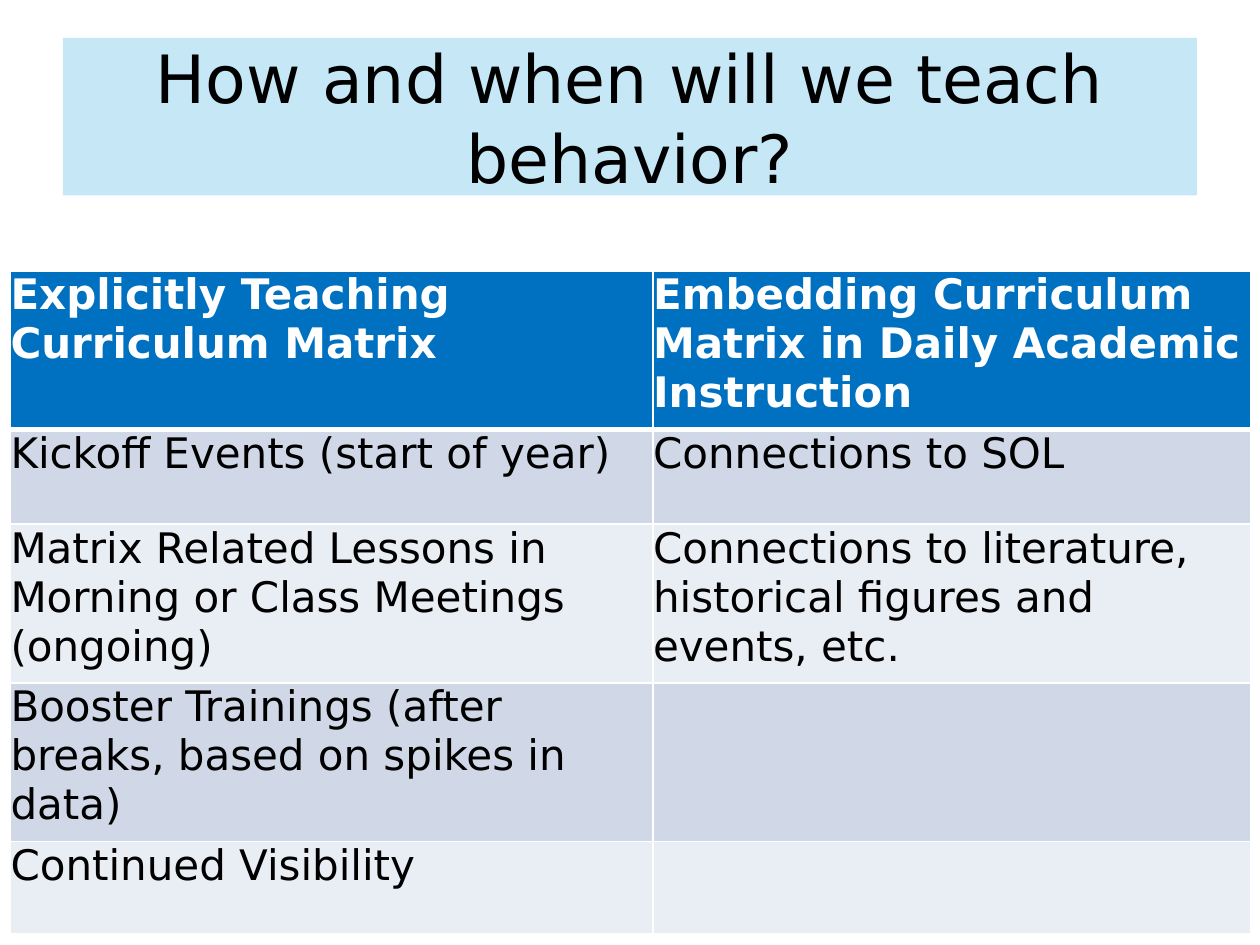
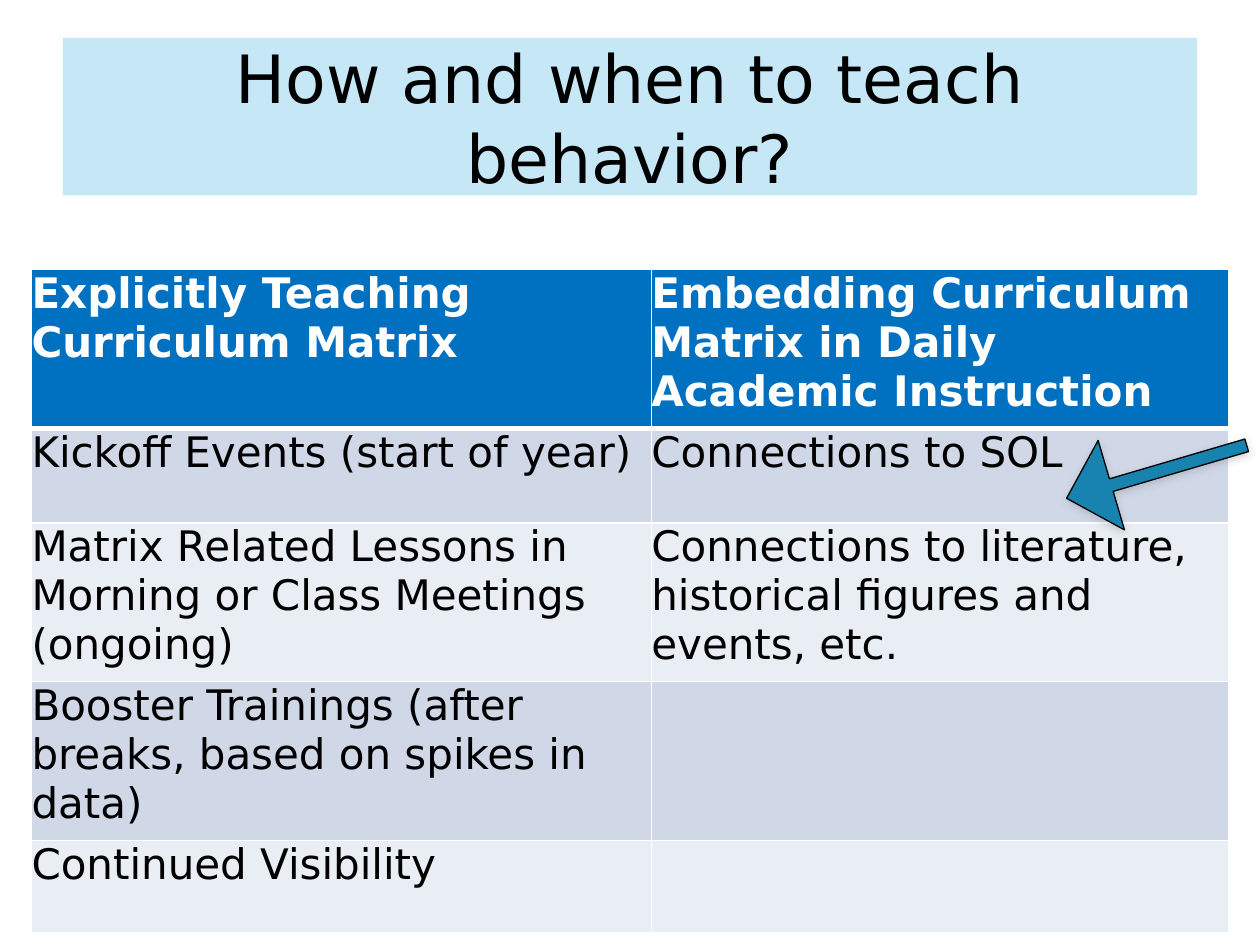
"""Build two slides on how and when to teach behavior, each with a title band and a table."""
from lxml import etree
from pptx import Presentation
from pptx.dml.color import RGBColor
from pptx.enum.shapes import MSO_SHAPE
from pptx.enum.text import MSO_ANCHOR, PP_ALIGN
from pptx.oxml import parse_xml
from pptx.oxml.ns import qn
from pptx.util import Pt

RECTANGLE = MSO_SHAPE.RECTANGLE
DOWN_ARROW = MSO_SHAPE.DOWN_ARROW
MIDDLE = MSO_ANCHOR.MIDDLE
CENTER = PP_ALIGN.CENTER
FONT = "DejaVu Sans"
COLORS = {
    "band": "A9DCF2",
    "header": "0070C0",
    "odd_row": "D0D8E8",
    "even_row": "E9EDF4",
    "arrow": "1883AF",
    "shadow": "808080",
    "text": "000000",
    "white": "FFFFFF",
}
ROW_HEIGHTS = [90.72, 54, 90.72, 90.72, 52.56]
ROWS = [
    ("Explicitly Teaching Curriculum Matrix",
     "Embedding Curriculum Matrix in Daily Academic Instruction"),
    ("Kickoff Events (start of year)", "Connections to SOL"),
    ("Matrix Related Lessons in Morning or Class Meetings (ongoing)",
     "Connections to literature, historical figures and events, etc."),
    ("Booster Trainings (after breaks, based on spikes in data)", ""),
    ("Continued Visibility", ""),
]
SLIDES = [
    ("How and when will we teach behavior?", 6, 154.8, (367.2, 341.28)),
    ("How and when to teach behavior?", 18, 154.08, (354.24, 329.76)),
]


def style_text(paragraph, size, color, bold=False):
    """Set the font of a whole paragraph."""
    paragraph.font.name = FONT
    paragraph.font.size = Pt(size)
    paragraph.font.bold = bold
    paragraph.font.color.rgb = RGBColor.from_string(COLORS[color])


def add_border(cell, side, width):
    """Draw one white border of a table cell."""
    line = etree.SubElement(cell._tc.get_or_add_tcPr(), qn(f"a:{side}"), w=str(Pt(width)))
    fill = etree.SubElement(line, qn("a:solidFill"))
    etree.SubElement(fill, qn("a:srgbClr"), val=COLORS["white"])


presentation = Presentation()
presentation.slide_width = Pt(720)
presentation.slide_height = Pt(540)

for title, left, top, column_widths in SLIDES:
    slide = presentation.slides.add_slide(presentation.slide_layouts[6])

    band = slide.shapes.add_shape(RECTANGLE, Pt(36), Pt(21.6), Pt(648), Pt(90))
    band.shadow.inherit = False
    band.line.fill.background()
    band.fill.solid()
    band.fill.fore_color.rgb = RGBColor.from_string(COLORS["band"])
    band_color = band._element.spPr.find(qn("a:solidFill"))[0]
    etree.SubElement(band_color, qn("a:alpha"), val="67000")
    band.text_frame.word_wrap = True
    band.text_frame.vertical_anchor = MIDDLE
    paragraph = band.text_frame.paragraphs[0]
    paragraph.text = title
    paragraph.alignment = CENTER
    style_text(paragraph, 38, "text")

    table = slide.shapes.add_table(
        len(ROWS), 2, Pt(left), Pt(top), Pt(sum(column_widths)), Pt(sum(ROW_HEIGHTS))
    ).table
    for column, width in zip(table.columns, column_widths):
        column.width = Pt(width)
    for row_index, (height, texts) in enumerate(zip(ROW_HEIGHTS, ROWS)):
        table.rows[row_index].height = Pt(height)
        is_header = row_index == 0
        row_color = "header" if is_header else "odd_row" if row_index % 2 else "even_row"
        for column_index, text in enumerate(texts):
            cell = table.cell(row_index, column_index)
            cell.margin_left = cell.margin_right = cell.margin_top = cell.margin_bottom = 0
            add_border(cell, "lnL", 1)
            add_border(cell, "lnR", 1)
            add_border(cell, "lnT", 3 if row_index == 1 else 1)
            add_border(cell, "lnB", 3 if is_header else 1)
            cell.fill.solid()
            cell.fill.fore_color.rgb = RGBColor.from_string(COLORS[row_color])
            paragraph = cell.text_frame.paragraphs[0]
            if text:
                paragraph.text = text
            style_text(paragraph, 24, "white" if is_header else "text", is_header)

arrow = slide.shapes.add_shape(DOWN_ARROW, Pt(634.32), Pt(216), Pt(53.28), Pt(107.28))
arrow.rotation = 73.6
arrow.adjustments[0] = 0.14
arrow.adjustments[1] = 0.5
arrow.fill.solid()
arrow.fill.fore_color.rgb = RGBColor.from_string(COLORS["arrow"])
arrow.line.color.rgb = RGBColor.from_string(COLORS["text"])
arrow.line.width = Pt(0.75)
arrow._element.spPr.append(parse_xml(
    '<a:effectLst xmlns:a="http://schemas.openxmlformats.org/drawingml/2006/main">'
    f'<a:outerShdw blurRad="{Pt(5)}" dist="{Pt(1.8)}" dir="5400000" rotWithShape="0">'
    f'<a:srgbClr val="{COLORS["shadow"]}"><a:alpha val="34000"/></a:srgbClr>'
    '</a:outerShdw></a:effectLst>'
))

presentation.save("out.pptx")
